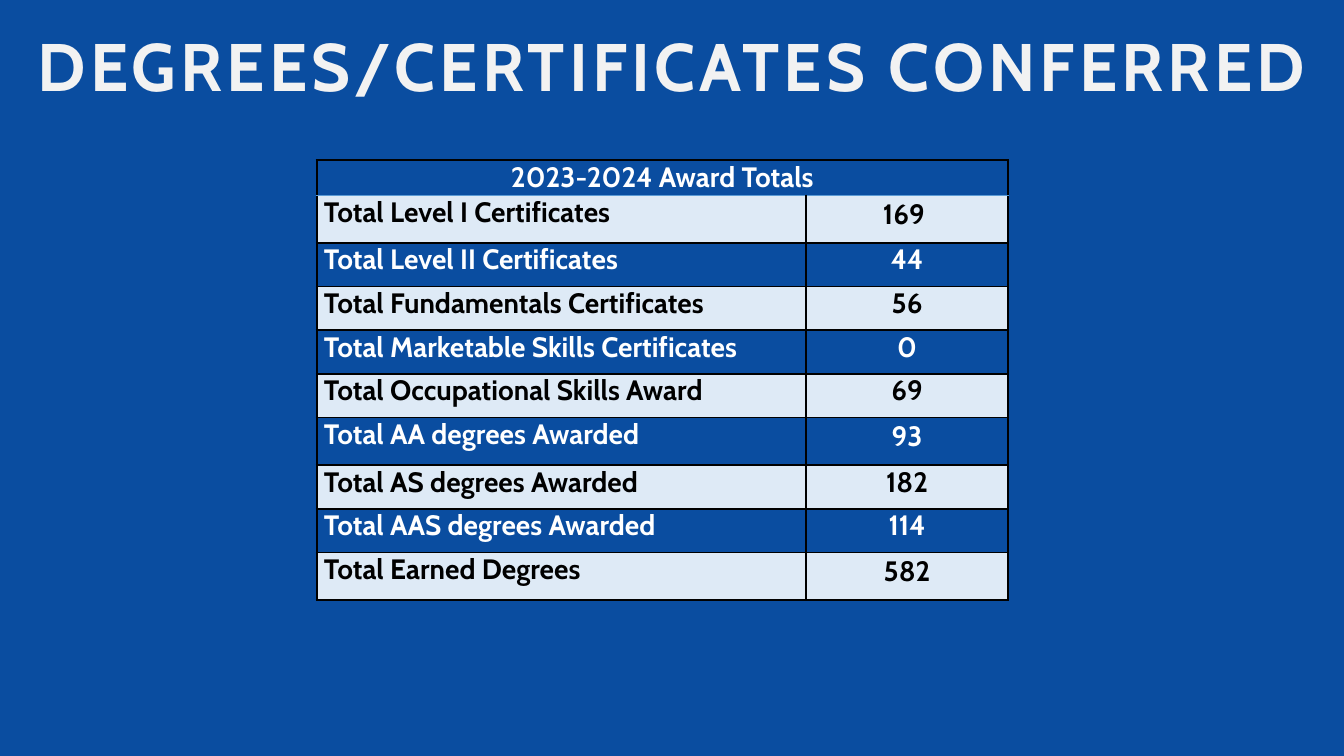
import dataclasses
import pptx
import pptx.dml.color
import pptx.enum.text
import pptx.oxml
import pptx.oxml.ns
import pptx.util

Cm = pptx.util.Cm
Align = pptx.enum.text.PP_ALIGN


@dataclasses.dataclass(frozen=True)
class Theme:
    font: str = "Cabin"
    blue: str = "0A4DA0"
    pale: str = "DEEAF6"
    sky: str = "5B9BD5"
    black: str = "000000"
    white: str = "FFFFFF"
    title: str = "F2F2F2"
    big: int = 48
    body: int = 20
    rule: float = 1.5
    thin: float = 1


@dataclasses.dataclass(frozen=True)
class Award:
    label: str
    count: str
    loose: bool = False


THEME = Theme()
AWARDS = [
    Award("Total Level I Certificates", "169\u00a0".replace("\u00a0", " "), True),
    Award("Total Level II Certificates", "44"),
    Award("Total Fundamentals Certificates", "56"),
    Award("Total Marketable Skills Certificates", "0"),
    Award("Total Occupational Skills Award", "69"),
    Award("Total AA degrees Awarded", "93", True),
    Award("Total AS degrees Awarded", "182"),
    Award("Total AAS degrees Awarded", "114"),
    Award("Total Earned Degrees", "582", True),
]


def rgb(code: str) -> pptx.dml.color.RGBColor:
    return pptx.dml.color.RGBColor.from_string(code)


def write(frame, text: str, size: int, color: str, align=Align.LEFT, lead: float = 1.0):
    para = frame.paragraphs[0]
    para.alignment = align
    para.line_spacing = lead
    run = para.add_run()
    run.text = text
    run.font.name = THEME.font
    run.font.size = pptx.util.Pt(size)
    run.font.bold = True
    run.font.color.rgb = rgb(color)
    return run


def edge(cell, side: str, color: str, width: float) -> None:
    props = cell._tc.get_or_add_tcPr()
    props.append(pptx.oxml.parse_xml(
        f'<a:ln{side} {pptx.oxml.ns.nsdecls("a")} w="{pptx.util.Pt(width)}">'
        f'<a:solidFill><a:srgbClr val="{color}"/></a:solidFill></a:ln{side}>'))


def style(cell, fill: str = "", sky: str = "") -> None:
    cell.margin_left = cell.margin_right = Cm(0.18)
    cell.margin_top = cell.margin_bottom = 0
    for side in "LRTB":
        if side == sky:
            edge(cell, side, THEME.sky, THEME.thin)
        else:
            edge(cell, side, THEME.black, THEME.rule)
    if fill:
        cell.fill.solid()
        cell.fill.fore_color.rgb = rgb(fill)
    else:
        cell.fill.background()


def add_title(slide) -> None:
    box = slide.shapes.add_textbox(Cm(0.58), Cm(0.84), Cm(32.72), Cm(1.55))
    frame = box.text_frame
    frame.word_wrap = True
    frame.margin_left = frame.margin_right = 0
    frame.margin_top = frame.margin_bottom = 0
    run = write(frame, "DEGREES/CERTIFICATES CONFERRED", THEME.big, THEME.title,
                Align.CENTER, 0.9)
    run._r.get_or_add_rPr().set("spc", "300")


def add_totals(slide) -> None:
    shape = slide.shapes.add_table(len(AWARDS) + 1, 2, Cm(7.98), Cm(4.04),
                                   Cm(17.42), Cm(11.05))
    table = shape.table
    table.first_row = table.horz_banding = False
    for col, width in zip(table.columns, (12.34, 5.08)):
        col.width = Cm(width)
    table.rows[0].height = Cm(0.88)
    head = table.cell(0, 0)
    head.merge(table.cell(0, 1))
    for col in range(2):
        style(table.cell(0, col), sky="B")
    write(head.text_frame, "2023-2024 Award Totals", THEME.body, THEME.white, Align.CENTER)
    for row, award in enumerate(AWARDS, 1):
        table.rows[row].height = Cm(1.2 if award.loose else 1.1)
        odd = row % 2 == 1
        ink = THEME.black if odd else THEME.white
        label, count = table.cell(row, 0), table.cell(row, 1)
        for cell in (label, count):
            style(cell, THEME.pale if odd else "", "T" if row == 1 else "")
        write(label.text_frame, award.label, THEME.body, ink)
        write(count.text_frame, award.count, THEME.body, ink, Align.CENTER,
              1.07 if award.loose else 1.0)


def main() -> None:
    deck = pptx.Presentation()
    deck.slide_width, deck.slide_height = Cm(33.87), Cm(19.05)
    slide = deck.slides.add_slide(deck.slide_layouts[6])
    slide.background.fill.solid()
    slide.background.fill.fore_color.rgb = rgb(THEME.blue)
    add_title(slide)
    add_totals(slide)
    deck.save("out.pptx")


if __name__ == "__main__":
    main()
